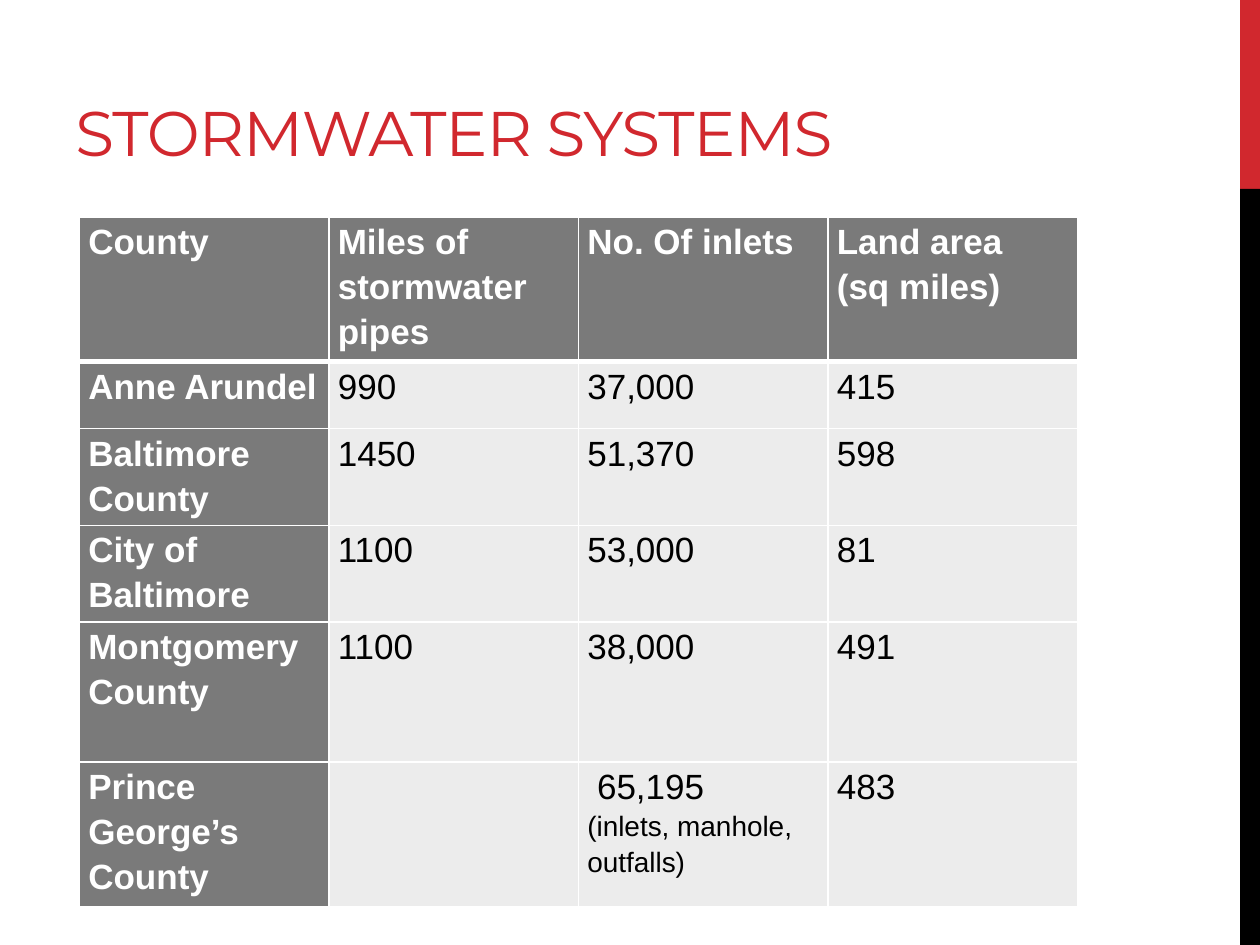
from dataclasses import dataclass

from lxml.etree import SubElement
from pptx import Presentation
from pptx.dml.color import RGBColor
from pptx.enum.shapes import MSO_SHAPE
from pptx.enum.text import MSO_ANCHOR
from pptx.oxml.ns import qn
from pptx.util import Cm, Pt


@dataclass(frozen=True)
class Theme:
    red: str = "D1282E"
    black: str = "000000"
    white: str = "FFFFFF"
    heading_fill: str = "7A7A7A"
    body_fill: str = "ECECEC"
    title_font: str = "Montserrat"
    table_font: str = "Arial"
    title_size: int = 36
    table_size: int = 20
    note_size: int = 16


THEME = Theme()

ROWS = [
    ["County", "Miles of stormwater pipes", "No. Of inlets", "Land area\n(sq miles)"],
    ["Anne Arundel", "990", "37,000", "415"],
    ["Baltimore County", "1450", "51,370", "598"],
    ["City of Baltimore", "1100", "53,000", "81"],
    ["Montgomery County", "1100", "38,000", "491"],
    ["Prince George’s County", "", " 65,195\n(inlets, manhole, outfalls)", "483"],
]
ROW_HEIGHTS = [2.82, 1.35, 1.35, 1.35, 2.82, 2.82]
COLUMN_WIDTH = 5.03


def rgb(color):
    return RGBColor.from_string(color)


def add_bar(s, top, height, color):
    bar = s.shapes.add_shape(MSO_SHAPE.RECTANGLE, Cm(25), Cm(top), Cm(0.4), Cm(height))
    bar.shadow.inherit = False
    bar.fill.solid()
    bar.fill.fore_color.rgb = rgb(color)
    bar.line.fill.background()


def add_title(s, text):
    sp = s.shapes.add_textbox(Cm(1.27), Cm(-0.28), Cm(21.23), Cm(3.81))
    tf = sp.text_frame
    tf.word_wrap = True
    tf.vertical_anchor = MSO_ANCHOR.BOTTOM
    p = tf.paragraphs[0]
    r = p.add_run()
    r.text = text
    r.font._element.set("spc", "-60")
    p.font.name = THEME.title_font
    p.font.size = Pt(THEME.title_size)
    p.font.color.rgb = rgb(THEME.red)


def set_borders(cell, bottom_width):
    """Draw white cell edges; they must precede the fill in the XML."""
    tc_pr = cell._tc.get_or_add_tcPr()
    for side, width in (("L", 1), ("R", 1), ("T", 1), ("B", bottom_width)):
        ln = SubElement(tc_pr, qn(f"a:ln{side}"), w=str(Pt(width)))
        fill = SubElement(ln, qn("a:solidFill"))
        SubElement(fill, qn("a:srgbClr"), val=THEME.white)


def fill_cell(cell, text, is_heading, bottom_width):
    set_borders(cell, bottom_width)
    cell.fill.solid()
    cell.fill.fore_color.rgb = rgb(THEME.heading_fill if is_heading else THEME.body_fill)
    cell.margin_left = cell.margin_right = Cm(0.18)
    cell.margin_top = cell.margin_bottom = 0
    cell.text = text
    for p in cell.text_frame.paragraphs:
        is_note = p.text.startswith("(") and not is_heading
        p.line_spacing = 1.15
        p.font.name = THEME.table_font
        p.font.size = Pt(THEME.note_size if is_note else THEME.table_size)
        p.font.bold = is_heading
        p.font.color.rgb = rgb(THEME.white if is_heading else THEME.black)


def add_county_table(s):
    columns = len(ROWS[0])
    frame = s.shapes.add_table(len(ROWS), columns, Cm(1.6), Cm(4.37),
                               Cm(columns * COLUMN_WIDTH), Cm(sum(ROW_HEIGHTS)))
    table = frame.table
    for column in table.columns:
        column.width = Cm(COLUMN_WIDTH)
    for i, (values, height) in enumerate(zip(ROWS, ROW_HEIGHTS)):
        table.rows[i].height = Cm(height)
        for j, text in enumerate(values):
            fill_cell(table.cell(i, j), text, i == 0 or j == 0, 3 if i == 0 else 1)
    for cell in table.rows[1].cells:
        cell._tc.tcPr.find(qn("a:lnT")).set("w", str(Pt(3)))


def main():
    prs = Presentation()
    prs.slide_width, prs.slide_height = Cm(25.4), Cm(19.05)
    s = prs.slides.add_slide(prs.slide_layouts[6])
    add_bar(s, 0, 3.81, THEME.red)
    add_bar(s, 3.81, 15.24, THEME.black)
    add_title(s, "STORMWATER SYSTEMS")
    add_county_table(s)
    prs.save("out.pptx")


if __name__ == "__main__":
    main()
